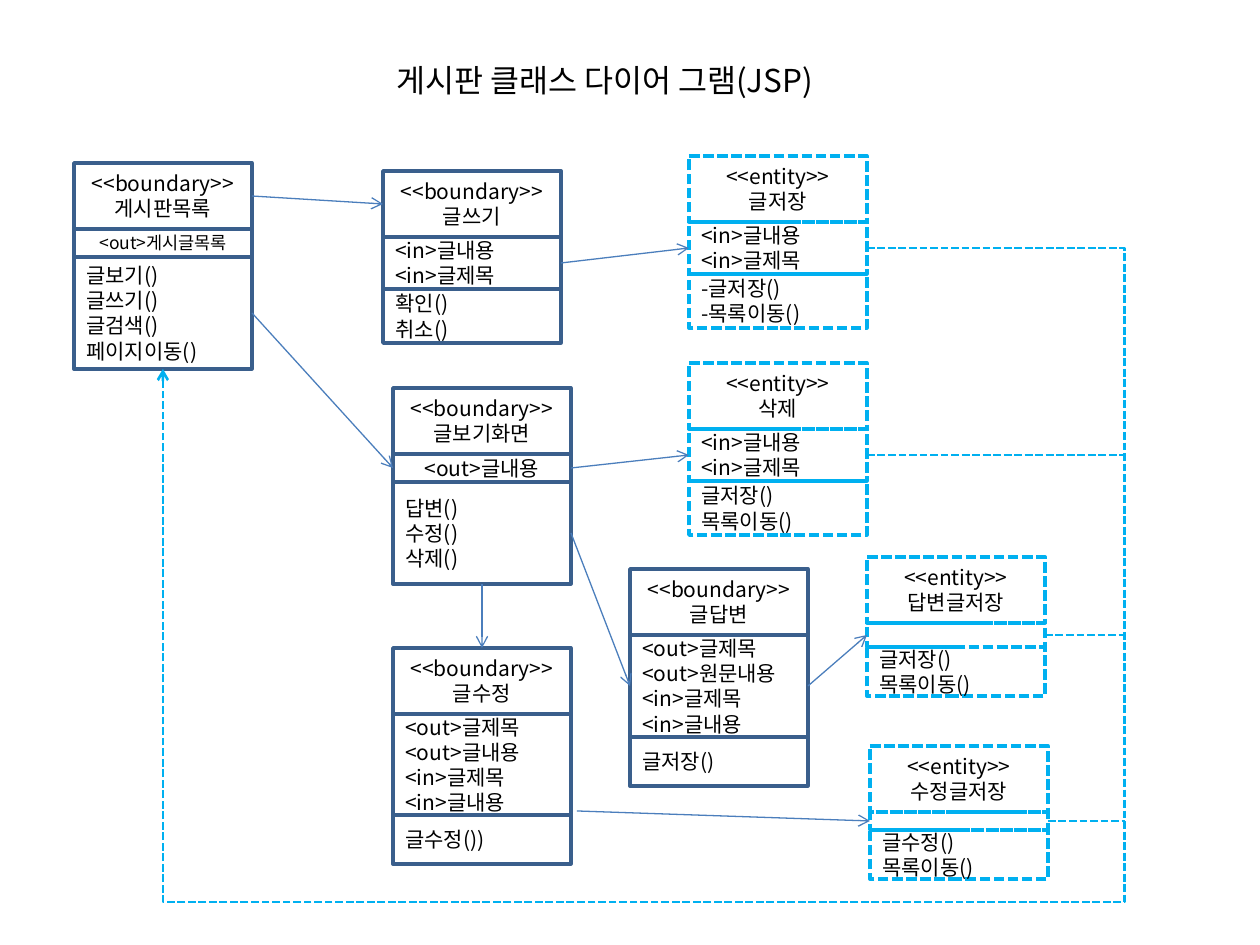
"""Draw the class diagram of a JSP bulletin board."""
from dataclasses import dataclass

from lxml import etree
from pptx import Presentation
from pptx import util as u
from pptx.dml.color import RGBColor
from pptx.enum import dml, shapes, text
from pptx.oxml.ns import qn


@dataclass(frozen=True)
class Theme:
    font: str = "Noto Sans CJK KR"
    ink: str = "000000"
    bound: str = "3A5F8C"
    entity: str = "00B0F0"
    arrow: str = "4B7EBC"
    title: int = 18
    body: int = 12
    small: int = 10
    edge: float = 2
    lane: float = 1.5
    thin: float = 0.75


T = Theme()
PX = u.Inches(1) / 126
WIDE = 178
TOP, LEFT, BOTTOM, RIGHT = range(4)
LANE = (1125, 902)

TITLE = ("게시판 클래스 다이어 그램(JSP)", 384, 55, 475, 50)
OUT = ["<out>글제목", "<out>글내용", "<in>글제목", "<in>글내용"]
REPLY = ["<out>글제목", "<out>원문내용", "<in>글제목", "<in>글내용"]
IN = ["<in>글내용", "<in>글제목"]
SAVE = ["글저장()", "목록이동()"]

CARDS = {
    "list": ("boundary", "게시판목록", 74, 163, (66, 28, 112), ["<out>게시글목록"],
             ["글보기()", "글쓰기()", "글검색()", "페이지이동()"]),
    "view": ("boundary", "글보기화면", 393, 388, (66, 28, 102), ["<out>글내용"],
             ["답변()", "수정()", "삭제()"]),
    "write": ("boundary", "글쓰기", 383, 171, (66, 52, 54), IN, ["확인()", "취소()"]),
    "edit": ("boundary", "글수정", 393, 648, (66, 101, 49), OUT, ["글수정())"]),
    "reply": ("boundary", "글답변", 630, 569, (66, 102, 49), REPLY, ["글저장()"]),
    "save": ("entity", "글저장", 689, 156, (66, 52, 54), IN, ["-글저장()", "-목록이동()"]),
    "drop": ("entity", "삭제", 689, 363, (66, 52, 54), IN, SAVE),
    "answer": ("entity", "답변글저장", 867, 557, (66, 24, 49), [], SAVE),
    "update": ("entity", "수정글저장", 870, 746, (66, 18, 49), [], ["글수정()", "목록이동()"]),
}
SMALL = {("list", 1)}

ARROWS = [
    (("view", 2, BOTTOM), ("edit", 0, TOP)),
    (("list", 2, RIGHT), ("view", 1, LEFT)),
    (("write", 1, RIGHT), ("save", 1, LEFT)),
    (("list", 0, RIGHT), ("write", 0, LEFT)),
    (("view", 2, RIGHT), ("reply", 1, LEFT)),
    (("view", 1, RIGHT), ("drop", 1, LEFT)),
    ((577, 811), ("update", 1, LEFT)),
    (("reply", 1, RIGHT), ("answer", 1, LEFT)),
]
STUBS = ["drop", "answer", "update"]


def px(n):
    return u.Emu(round(n * PX))


def rgb(hue):
    return RGBColor.from_string(hue)


def write(frame, lines, size, align):
    for i, line in enumerate(lines):
        para = frame.paragraphs[0] if i == 0 else frame.add_paragraph()
        para.text, para.alignment = line, align
        font = para.font
        font.name, font.size = T.font, u.Pt(size)
        font.color.rgb = rgb(T.ink)
        props = para._p.get_or_add_pPr().find(qn("a:defRPr"))
        for run in para.runs:
            run.font.name, run.font.size = T.font, u.Pt(size)
            run.font.color.rgb = rgb(T.ink)
            etree.SubElement(run.font._element, qn("a:ea"), typeface=T.font)
        etree.SubElement(props, qn("a:ea"), typeface=T.font)


def stroke(line, hue, width, dash=False):
    line.color.rgb, line.width = rgb(hue), u.Pt(width)
    if dash:
        line.dash_style = dml.MSO_LINE.SQUARE_DOT


def card(slide, key):
    kind, name, left, top, highs, fields, calls = CARDS[key]
    group, boxes = slide.shapes.add_group_shape(), []
    parts = [[f"<<{kind}>>", name], fields, calls]
    for i, (lines, high) in enumerate(zip(parts, highs)):
        box = group.shapes.add_shape(shapes.MSO_SHAPE.RECTANGLE,
                                     px(left), px(top), px(WIDE), px(high))
        box.shadow.inherit = False
        box.fill.background()
        stroke(box.line, getattr(T, "bound" if kind == "boundary" else kind),
               T.edge, kind == "entity")
        mid = i == 0 or i == 1 and len(lines) == 1
        box.text_frame.vertical_anchor = text.MSO_ANCHOR.MIDDLE
        write(box.text_frame, lines, T.small if (key, i) in SMALL else T.body,
              text.PP_ALIGN.CENTER if mid else text.PP_ALIGN.LEFT)
        boxes.append(box)
        top += high
    return boxes


def spot(boxes, end):
    if len(end) == 2:
        return px(end[0]), px(end[1])
    box = boxes[end[0]][end[1]]
    across, down = {TOP: (1, 0), LEFT: (0, 1), BOTTOM: (1, 2), RIGHT: (2, 1)}[end[2]]
    return box.left + box.width * across // 2, box.top + box.height * down // 2


def link(slide, boxes, start, end, hue, width, dash=False, head=True, bent=False):
    kind = shapes.MSO_CONNECTOR.ELBOW if bent else shapes.MSO_CONNECTOR.STRAIGHT
    line = slide.shapes.add_connector(kind, *spot(boxes, start), *spot(boxes, end))
    for spec_end, join in ((start, line.begin_connect), (end, line.end_connect)):
        if len(spec_end) == 3:
            join(boxes[spec_end[0]][spec_end[1]], spec_end[2])
    stroke(line.line, hue, width, dash)
    if head:
        etree.SubElement(line.line._get_or_add_ln(), qn("a:tailEnd"), type="arrow")
    etree.SubElement(line._element.spPr, qn("a:effectLst"))
    return line


def detour(line):
    geom = line._element.spPr.find(qn("a:prstGeom"))
    geom.set("prst", "bentConnector4")
    guides = geom.find(qn("a:avLst"))
    if guides is None:
        guides = etree.SubElement(geom, qn("a:avLst"))
    ratios = [(px(way) - start) / (end - start) for way, start, end in
              ((LANE[0], line.begin_x, line.end_x), (LANE[1], line.begin_y, line.end_y))]
    for i, ratio in enumerate(ratios, 1):
        etree.SubElement(guides, qn("a:gd"), name=f"adj{i}",
                         fmla=f"val {round(ratio * 100000)}")


def main():
    deck = Presentation()
    deck.slide_width, deck.slide_height = u.Inches(10), u.Inches(7.5)
    slide = deck.slides.add_slide(deck.slide_layouts[6])
    boxes = {key: card(slide, key) for key in CARDS}

    words, *place = TITLE
    head = slide.shapes.add_textbox(*map(px, place)).text_frame
    head.word_wrap = False
    head.auto_size = text.MSO_AUTO_SIZE.SHAPE_TO_FIT_TEXT
    write(head, [words], T.title, text.PP_ALIGN.LEFT)

    for start, end in ARROWS:
        link(slide, boxes, start, end, T.arrow, T.thin)
    detour(link(slide, boxes, ("save", 1, RIGHT), ("list", 2, BOTTOM),
                T.entity, T.lane, dash=True, bent=True))
    for key in STUBS:
        start = (key, 1, RIGHT)
        level = round(spot(boxes, start)[1] / PX)
        link(slide, boxes, start, (LANE[0], level), T.entity, T.lane,
             dash=True, head=False)
    deck.save("out.pptx")


if __name__ == "__main__":
    main()
